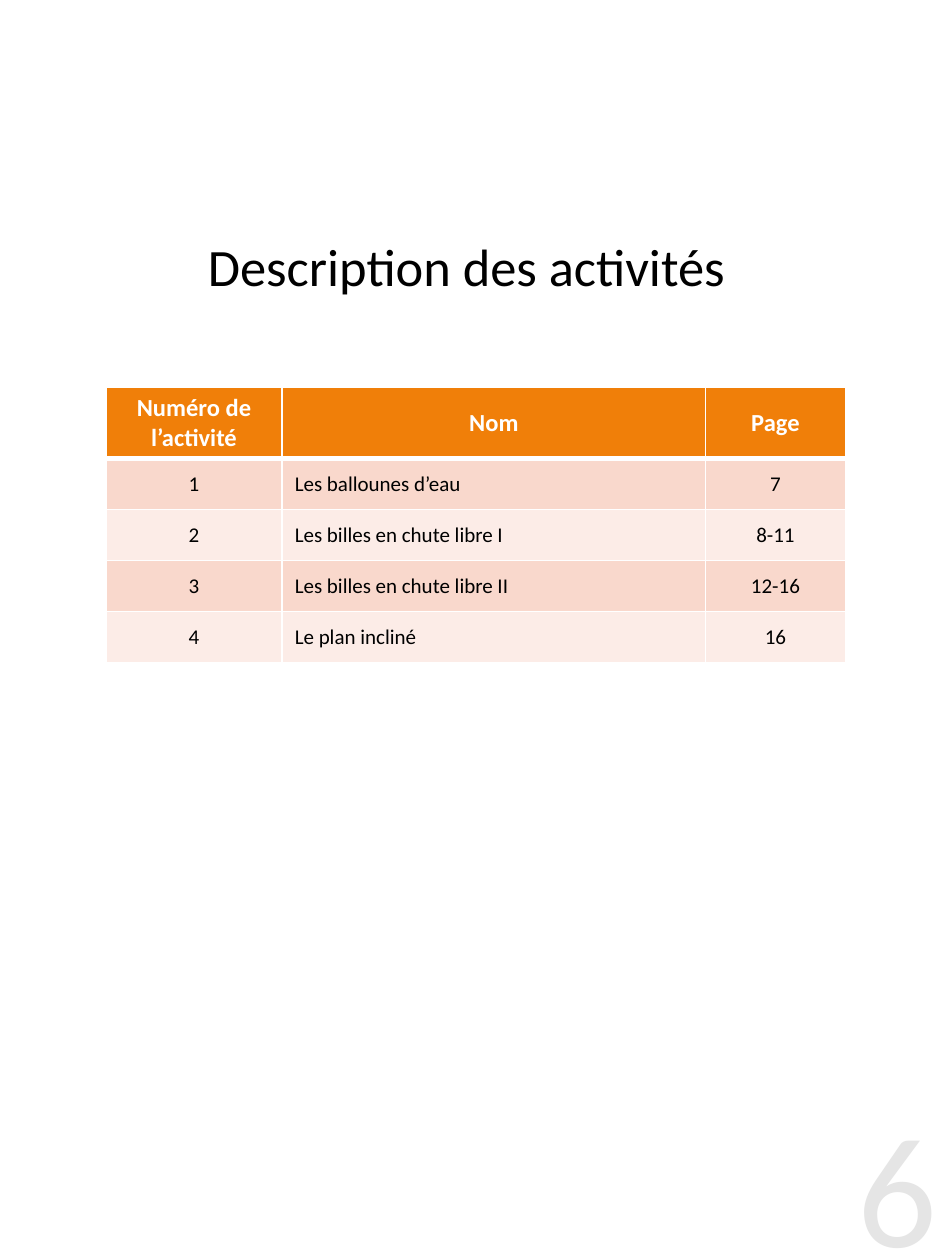
import pptx
import pptx.util
import pptx.dml.color
import pptx.enum.text
import pptx.oxml
import pptx.oxml.ns

HUES = {"ink": "000000", "paper": "FFFFFF", "head": "F07F09",
        "odd": "F9D8CC", "even": "FCECE7", "pale": "E5E5E5"}
ALIGN = pptx.enum.text.PP_ALIGN
ANCHOR = pptx.enum.text.MSO_ANCHOR


class Page:
    def __init__(self, deck, face):
        self.deck = deck
        self.face = face
        self.slide = deck.slides.add_slide(deck.slide_layouts[6])

    def across(self, share):
        return int(self.deck.slide_width * share)

    def down(self, share):
        return int(self.deck.slide_height * share)

    def place(self, left, top, width, height):
        return self.across(left), self.down(top), self.across(width), self.down(height)

    def letter(self, frame, text, hue, align, size, bold=False):
        frame.text = text
        form = {"name": self.face, "size": pptx.util.Pt(size), "bold": bold}
        for para in frame.paragraphs:
            para.alignment = align
            for key, value in form.items():
                setattr(para.font, key, value)
            para.font.color.rgb = pptx.dml.color.RGBColor.from_string(HUES[hue])

    def label(self, area, text, hue, size, anchor, inset=0):
        frame = self.slide.shapes.add_textbox(*self.place(*area)).text_frame
        form = {"word_wrap": True, "vertical_anchor": anchor}
        form.update({f"margin_{side}": pptx.util.Inches(inset)
                     for side in ("left", "top", "right", "bottom")})
        for key, value in form.items():
            setattr(frame, key, value)
        self.letter(frame, text, hue, ALIGN.CENTER, size)

    def border(self, cell, widths):
        props = cell._tc.get_or_add_tcPr()
        for side, width in widths.items():
            props.append(pptx.oxml.parse_xml(
                f'<a:ln{side} {pptx.oxml.ns.nsdecls("a")} w="{pptx.util.Pt(width)}">'
                f'<a:solidFill><a:srgbClr val="{HUES["paper"]}"/></a:solidFill></a:ln{side}>'))

    def table(self, area, cols, rows, data):
        grid = self.slide.shapes.add_table(len(rows), len(cols), *self.place(*area)).table
        for col, share in zip(grid.columns, cols):
            col.width = self.across(share)
        for row, share in zip(grid.rows, rows):
            row.height = self.down(share)
        for r, line in enumerate(data):
            head = r == 0
            hue = "head" if head else "odd" if r % 2 else "even"
            for c, text in enumerate(line):
                cell = grid.cell(r, c)
                self.border(cell, {"L": 1, "R": 1, "T": 3 if r == 1 else 1, "B": 3 if head else 1})
                cell.fill.solid()
                cell.fill.fore_color.rgb = pptx.dml.color.RGBColor.from_string(HUES[hue])
                cell.vertical_anchor = ANCHOR.MIDDLE
                align = ALIGN.LEFT if c == 1 and not head else ALIGN.CENTER
                self.letter(cell.text_frame, text, "paper" if head else "ink",
                            align, 14 if head else 12, head)


def main():
    deck = pptx.Presentation()
    deck.slide_width = pptx.util.Inches(7.5)
    deck.slide_height = pptx.util.Inches(10)
    page = Page(deck, "Calibri")
    page.label((0.9, 0.865, 0.1, 0.135), "6", "pale", 90, ANCHOR.TOP)
    page.label((0, 0.169, 1, 0.084), "Description des activités ", "ink", 30,
               ANCHOR.MIDDLE, 0.1)
    cols = [1.4 / 7.5, 3.36 / 7.5, 1.11 / 7.5]
    rows = [0.057] + [0.0405] * 4
    page.table((0.84 / 7.5, 0.307, sum(cols), sum(rows)), cols, rows, [
        ("Numéro de\nl’activité", "Nom", "Page"),
        ("1", "Les ballounes d’eau", "7"),
        ("2", "Les billes en chute libre I", "8-11"),
        ("3", "Les billes en chute libre II", "12-16"),
        ("4", "Le plan incliné", "16"),
    ])
    deck.save("out.pptx")


if __name__ == "__main__":
    main()
